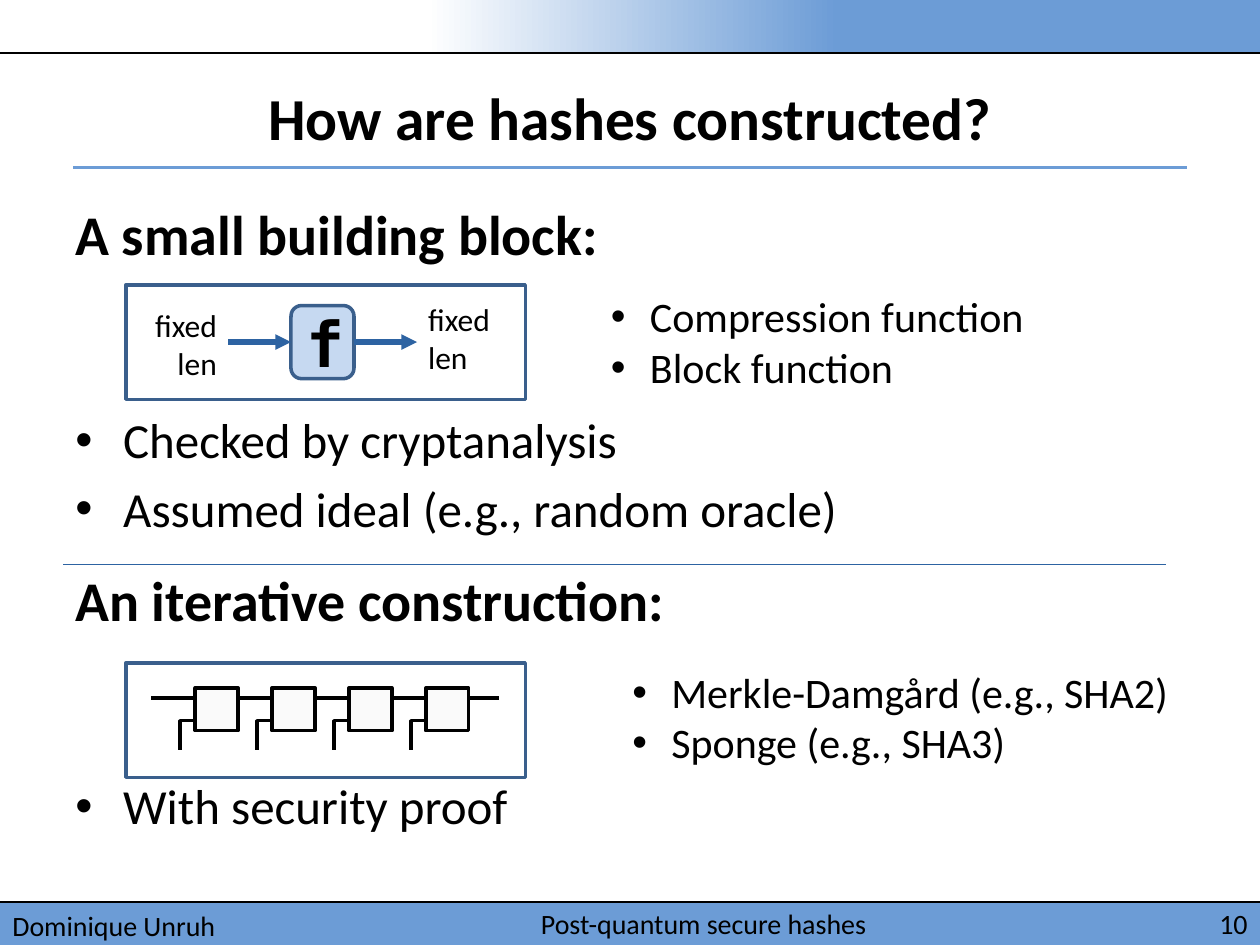
import pptx
import pptx.dml.color
import pptx.enum.shapes
import pptx.enum.text
import pptx.oxml.ns
import pptx.util
from lxml import etree

Inches = pptx.util.Inches
Pt = pptx.util.Pt
SHAPE = pptx.enum.shapes.MSO_SHAPE
ALIGN = pptx.enum.text.PP_ALIGN
ANCHOR = pptx.enum.text.MSO_ANCHOR
qn = pptx.oxml.ns.qn

FONT = "Calibri"
COLORS = {
    "black": "000000",
    "white": "FFFFFF",
    "band": "6C9CD6",
    "frame": "3A5F8C",
    "arrow": "2D63A2",
    "function": "C6D9F1",
    "step": "FAFAFA",
}


def rgb(name):
    return pptx.dml.color.RGBColor.from_string(COLORS[name])


def add_box(slide, box, kind=SHAPE.RECTANGLE, fill=None, line=None):
    shape = slide.shapes.add_shape(kind, *map(Inches, box))
    shape.shadow.inherit = False
    if fill:
        shape.fill.solid()
        shape.fill.fore_color.rgb = rgb(fill)
    else:
        shape.fill.background()
    if line:
        shape.line.color.rgb = rgb(line)
        shape.line.width = Pt(2)
    else:
        shape.line.fill.background()
    return shape


def add_line(slide, start, end, color, width, arrow=False):
    line = slide.shapes.add_connector(
        pptx.enum.shapes.MSO_CONNECTOR.STRAIGHT, *map(Inches, (*start, *end)))
    line.line.color.rgb = rgb(color)
    line.line.width = Pt(width)
    properties = line.element.spPr
    if arrow:
        etree.SubElement(properties.find(qn("a:ln")), qn("a:tailEnd"), type="triangle")
    etree.SubElement(properties, qn("a:effectLst"))
    return line


def add_text_box(slide, box, anchor=ANCHOR.TOP, wrap=True):
    frame = slide.shapes.add_textbox(*map(Inches, box)).text_frame
    frame.word_wrap = wrap
    frame.vertical_anchor = anchor
    return frame


def write(paragraph, text, size, bold=False, align=ALIGN.LEFT, indent=0, font=FONT):
    """Fill a paragraph; a positive indent in inches makes it a bullet."""
    paragraph.alignment = align
    if indent:
        properties = paragraph._p.get_or_add_pPr()
        properties.set("marL", str(Inches(indent)))
        properties.set("indent", str(-Inches(indent)))
        etree.SubElement(properties, qn("a:buFont"), typeface="Arial")
        etree.SubElement(properties, qn("a:buChar"), char="•")
    for index, part in enumerate(text.split("\n")):
        if index:
            paragraph.add_line_break()
        run = paragraph.add_run()
        run.text = part
        run.font.name = font
        run.font.size = Pt(size)
        run.font.bold = bold
        run.font.color.rgb = rgb("black")


def add_header(slide, left, top, width, height):
    band = add_box(slide, (left + 2.73, top, width - 2.73, height), fill="band")
    band.fill.gradient()
    band.fill.gradient_angle = 0
    for stop, position, color in zip(band.fill.gradient_stops, (0.09, 0.54), ("white", "band")):
        stop.position = position
        stop.color.rgb = rgb(color)
    add_line(slide, (left, top + height), (left + width, top + height), "black", 0.75)


def add_footer(slide, left, top, width, height):
    add_box(slide, (left, top, width, height), fill="band")
    add_line(slide, (left, top), (left + width, top), "black", 0.75)
    for text, offset, part_width, align, anchor in (
        ("Dominique Unruh", 0, 2.73, ALIGN.LEFT, ANCHOR.TOP),
        ("Post-quantum secure hashes", 2.42, 6.33, ALIGN.CENTER, ANCHOR.MIDDLE),
        ("10", 9.33, 0.67, ALIGN.RIGHT, ANCHOR.MIDDLE),
    ):
        frame = add_text_box(slide, (left + offset, top, part_width, height), anchor)
        write(frame.paragraphs[0], text, 16, align=align)


def add_title(slide, left, top, width, height):
    frame = add_text_box(slide, (left, top, width, height), ANCHOR.MIDDLE)
    write(frame.paragraphs[0], "How are hashes constructed?", 34, True, ALIGN.CENTER)
    rule = top + height - 0.02
    add_line(slide, (left, rule), (left + width, rule), "band", 2)


def add_body(slide, left, top, width, height):
    """Write the outline, leaving room for a diagram under each heading."""
    frame = add_text_box(slide, (left, top, width, height))
    frame.margin_top = Inches(0.08)
    diagram_gap = 82
    for index, (text, is_heading, gap) in enumerate((
        ("A small building block:", True, 0),
        ("Checked by cryptanalysis", False, diagram_gap),
        ("Assumed ideal (e.g., random oracle)", False, 5.6),
        ("An iterative construction:", True, 16),
        ("With security proof", False, diagram_gap),
    )):
        paragraph = frame.add_paragraph() if index else frame.paragraphs[0]
        paragraph.space_before = Pt(gap)
        if is_heading:
            write(paragraph, text, 32, bold=True)
        else:
            write(paragraph, text, 28, indent=0.38)


def add_examples(slide, left, top, width, height, items):
    frame = add_text_box(slide, (left, top, width, height), wrap=False)
    for index, item in enumerate(items):
        paragraph = frame.add_paragraph() if index else frame.paragraphs[0]
        write(paragraph, item, 24, indent=0.31)


def add_building_block(slide, left, top, width, height):
    add_box(slide, (left, top, width, height), line="frame")
    block_left, block_width, block_height, arrow_length = left + 1.31, 0.5, 0.58, 0.5
    block_right = block_left + block_width
    middle = top + height / 2
    block = add_box(slide, (block_left, middle - block_height / 2, block_width, block_height),
                    SHAPE.ROUNDED_RECTANGLE, "function", "frame")
    block.text_frame.vertical_anchor = ANCHOR.MIDDLE
    write(block.text_frame.paragraphs[0], "f", 36, True, ALIGN.CENTER, font="DejaVu Sans Mono")

    arrow_in = add_line(slide, (block_left - arrow_length, middle), (block_left, middle),
                        "arrow", 3, arrow=True)
    arrow_in.end_connect(block, 1)
    arrow_out = add_line(slide, (block_right, middle), (block_right + arrow_length, middle),
                         "arrow", 3, arrow=True)
    arrow_out.begin_connect(block, 3)

    for offset, drop, align in ((0.12, 0.12, ALIGN.RIGHT), (2.3, 0.07, ALIGN.LEFT)):
        frame = add_text_box(slide, (left + offset, top + drop, 0.7, 0.71), wrap=False)
        write(frame.paragraphs[0], "fixed\nlen", 18, align=align)


def add_iteration(slide, left, top, width, height, steps=4):
    add_box(slide, (left, top, width, height), line="frame")
    side, pitch = 0.34, 0.61
    first, step_top, chain = left + 0.55, top + 0.2, top + 0.28
    input_top, input_bottom = top + 0.46, top + 0.69
    wire_start = left + 0.2
    for index in range(steps):
        step_left = first + index * pitch
        add_box(slide, (step_left, step_top, side, side), fill="step", line="black")
        add_line(slide, (wire_start, chain), (step_left, chain), "black", 2)
        wire_start = step_left + side
        elbow = step_left - 0.12
        builder = slide.shapes.build_freeform(Inches(step_left), Inches(input_top))
        builder.add_line_segments(
            [(Inches(elbow), Inches(input_top)), (Inches(elbow), Inches(input_bottom))], close=False)
        message_input = builder.convert_to_shape()
        message_input.shadow.inherit = False
        message_input.fill.background()
        message_input.line.color.rgb = rgb("black")
        message_input.line.width = Pt(2)
    add_line(slide, (wire_start, chain), (wire_start + 0.24, chain), "black", 2)


def main():
    presentation = pptx.Presentation()
    presentation.slide_width = Inches(10)
    presentation.slide_height = Inches(7.5)
    slide = presentation.slides.add_slide(presentation.slide_layouts[6])
    add_header(slide, 0, 0, 10, 0.42)
    add_footer(slide, 0, 7.16, 10, 0.34)
    add_title(slide, 0.58, 0.5, 8.84, 0.85)
    add_body(slide, 0.5, 1.5, 9, 5.66)
    add_building_block(slide, 1, 2.26, 3.17, 0.91)
    add_examples(slide, 4.75, 2.26, 3.51, 0.91, ("Compression function", "Block function"))
    add_line(slide, (0.5, 4.48), (9.25, 4.48), "arrow", 0.5)
    add_iteration(slide, 1, 5.26, 3.17, 0.91)
    add_examples(slide, 4.92, 5.24, 4.5, 0.91,
                 ("Merkle-Damgård (e.g., SHA2)", "Sponge (e.g., SHA3)"))
    presentation.save("out.pptx")


if __name__ == "__main__":
    main()
